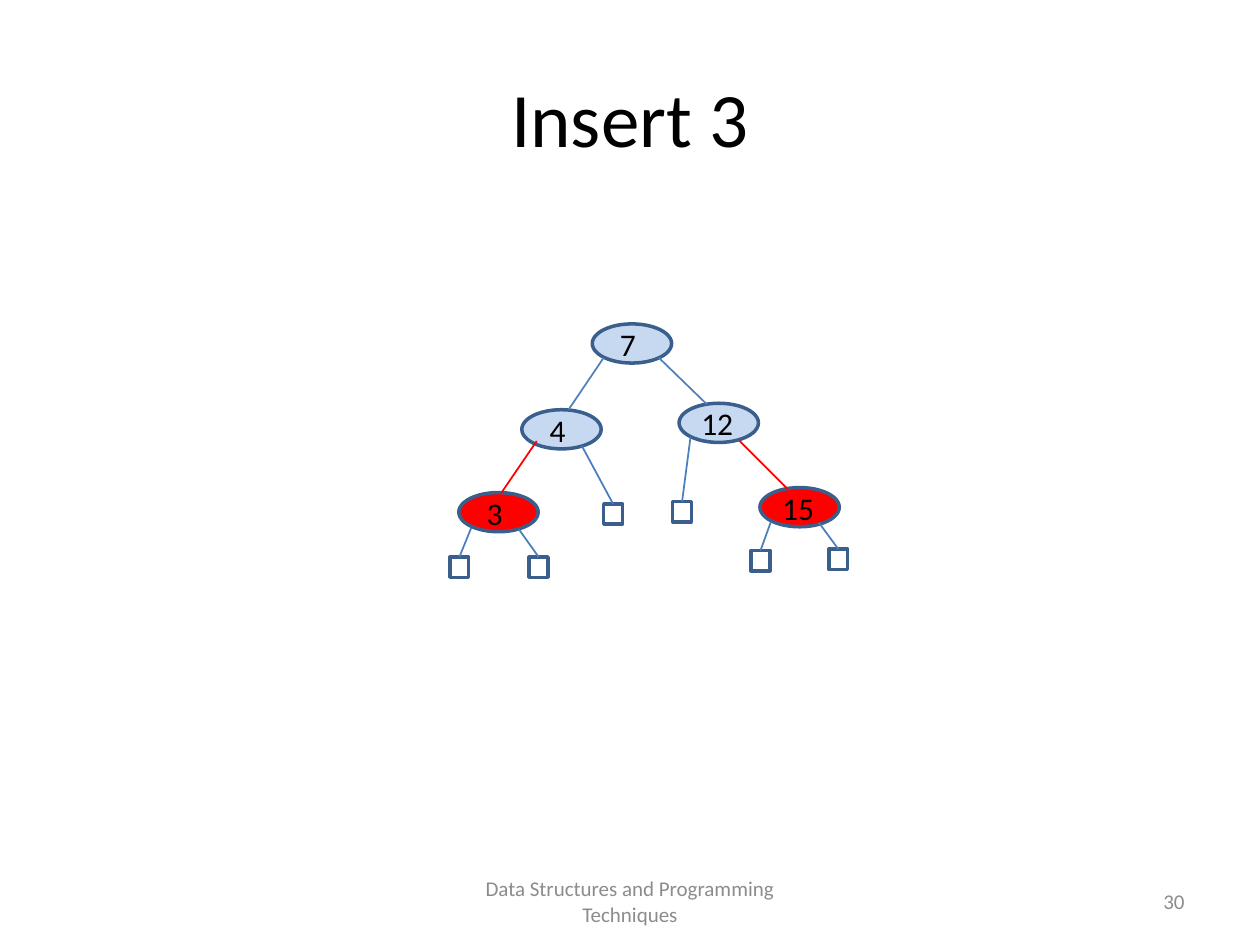
from pptx import Presentation
from pptx.dml.color import RGBColor
from pptx.enum.shapes import MSO_CONNECTOR, MSO_SHAPE
from pptx.enum.text import MSO_ANCHOR as Anchor, MSO_AUTO_SIZE as AutoSize, PP_ALIGN as Align
from pptx.oxml import parse_xml
from pptx.oxml.ns import nsdecls
from pptx.util import Cm, Pt

COLORS = {
    "text": "000000", "footer": "8C8C8C", "outline": "3A5F8C",
    "black node": "C6D9F1", "red node": "FF0000",
    "branch": "4F81BD", "red branch": "FF0000", "leaf branch": "4B7EBC",
}
FONT = "Calibri"
TITLE = "Insert 3"
FOOTER = "Data Structures and Programming Techniques"
PAGE_NUMBER = "30"

# All positions are in centimetres.
NODE_SIZE = (1.6, 0.79)
LABEL_SIZE = (1.24, 1.02)
LEAF_SIZE = (0.38, 0.41)

# key, left, top, fill
NODES = [
    ("7", 11.94, 6.53, "black node"),
    ("4", 10.52, 8.26, "black node"),
    ("12", 13.69, 8.13, "black node"),
    ("3", 9.25, 9.93, "red node"),
    ("15", 15.32, 9.83, "red node"),
]
# start on the parent, end on the child, colour
BRANCHES = [
    ((12.17, 7.21), (11.46, 8.26), "branch"),
    ((13.28, 7.21), (14.25, 8.15), "branch"),
    ((10.82, 8.89), (10.11, 9.93), "red branch"),
    ((14.91, 8.89), (15.88, 9.86), "red branch"),
]
# left and top of the leaf, start of its branch on the parent
LEAVES = [
    ((9.07, 11.23), (9.5, 10.64)),
    ((10.67, 11.23), (10.46, 10.67)),
    ((12.17, 10.16), (11.73, 8.99)),
    ((13.56, 10.11), (13.92, 8.81)),
    ((15.14, 11.1), (15.54, 10.52)),
    ((16.71, 11.07), (16.51, 10.54)),
]


def color(name):
    return RGBColor.from_string(COLORS[name])


def lengths(*values):
    return [Cm(value) for value in values]


def write(shape, text, size, color_name, align, anchor):
    frame = shape.text_frame
    frame.word_wrap = True
    frame.vertical_anchor = anchor
    paragraph = frame.paragraphs[0]
    paragraph.alignment = align
    run = paragraph.add_run()
    run.text = text
    run.font.name = FONT
    run.font.size = Pt(size)
    run.font.color.rgb = color(color_name)


def add_outlined(slide, kind, position, size, fill=None):
    shape = slide.shapes.add_shape(kind, *lengths(*position, *size))
    shape.shadow.inherit = False
    if fill:
        shape.fill.solid()
        shape.fill.fore_color.rgb = color(fill)
    else:
        shape.fill.background()
    shape.line.color.rgb = color("outline")
    shape.line.width = Pt(2)
    return shape


def add_branch(slide, start, end, color_name):
    branch = slide.shapes.add_connector(MSO_CONNECTOR.STRAIGHT, *lengths(*start, *end))
    branch.line.color.rgb = color(color_name)
    branch.line.width = Pt(1)
    branch._element.spPr.append(parse_xml(f"<a:effectLst {nsdecls('a')}/>"))
    return branch


def add_node(slide, key, left, top, fill):
    add_outlined(slide, MSO_SHAPE.OVAL, (left, top), NODE_SIZE, fill)
    indent = 0.1 if len(key) == 1 else 0.15
    label = slide.shapes.add_textbox(*lengths(left + indent, top - 0.1, *LABEL_SIZE))
    write(label, key, 18, "text", Align.CENTER, Anchor.TOP)
    label.text_frame.auto_size = AutoSize.SHAPE_TO_FIT_TEXT


def add_leaf(slide, position, start):
    leaf = add_outlined(slide, MSO_SHAPE.RECTANGLE, position, LEAF_SIZE)
    branch = add_branch(slide, start, position, "leaf branch")
    branch.end_connect(leaf, 0)


def main():
    presentation = Presentation()
    presentation.slide_width, presentation.slide_height = lengths(25.4, 19.05)
    slide = presentation.slides.add_slide(presentation.slide_layouts[5])

    title = slide.shapes.title
    title.left, title.top, title.width, title.height = lengths(1.27, 0.76, 22.86, 3.18)
    write(title, TITLE, 44, "text", Align.CENTER, Anchor.MIDDLE)

    for text, left, width, align in (
        (FOOTER, 8.68, 8.04, Align.CENTER),
        (PAGE_NUMBER, 18.2, 5.93, Align.RIGHT),
    ):
        box = slide.shapes.add_textbox(*lengths(left, 17.66, width, 1.01))
        write(box, text, 12, "footer", align, Anchor.MIDDLE)

    for node in NODES:
        add_node(slide, *node)
    for branch in BRANCHES:
        add_branch(slide, *branch)
    for leaf in LEAVES:
        add_leaf(slide, *leaf)

    presentation.save("out.pptx")


if __name__ == "__main__":
    main()
